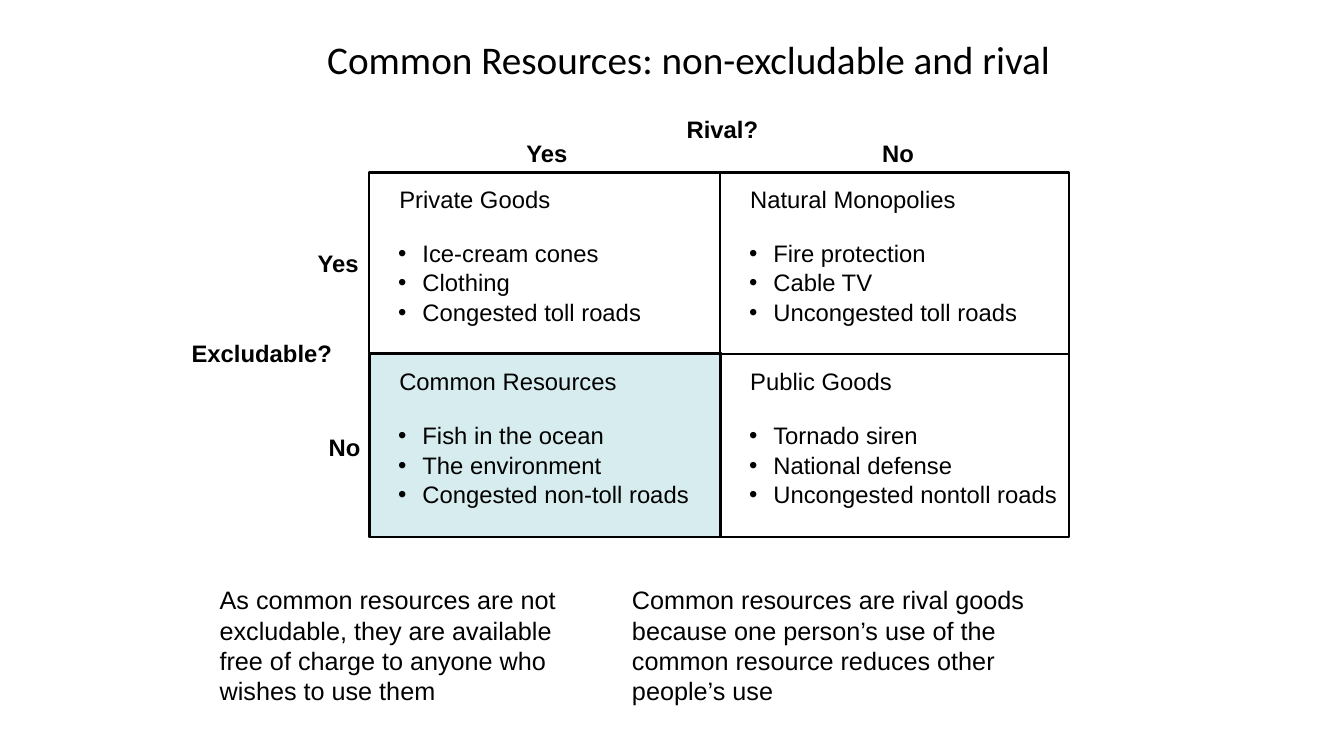
from lxml import etree
from pptx import Presentation
from pptx import util as u
from pptx.dml import color
from pptx.enum import shapes, text
from pptx.oxml import ns

PX = 9144
HUES = {"ink": "000000", "tint": "BBE0E3"}
BOLD = {"size": u.Pt(17), "bold": True}
PLAIN = {"size": u.Pt(17), "bold": False}
NOTE = {"size": u.Pt(18), "bold": False}
HEAD = {"size": u.Pt(28), "bold": False, "name": "Calibri"}
FLUSH = {"margin_left": 0, "margin_right": 0, "margin_top": 0,
         "margin_bottom": 0, "word_wrap": False}
LABELS = [
    ("Rival?", (681, 114, 72, 29)),
    ("Yes", (522, 138, 41, 29)),
    ("No", (875, 138, 32, 29)),
    ("Yes", (315, 247, 41, 29)),
    ("No", (326, 429, 32, 29)),
    ("Excludable?", (190, 336, 141, 29)),
]
GOODS = [
    [("Private Goods", ["Ice-cream cones", "Clothing", "Congested toll roads"]),
     ("Natural Monopolies", ["Fire protection", "Cable TV", "Uncongested toll roads"])],
    [("Common Resources", ["Fish in the ocean", "The environment", "Congested non-toll roads"]),
     ("Public Goods", ["Tornado siren", "National defense", "Uncongested nontoll roads"])],
]
NOTES = [
    ("As common resources are not excludable, they are available free of charge "
     "to anyone who wishes to use them", (208, 575, 392, 131)),
    ("Common resources are rival goods because one person’s use of the common "
     "resource reduces other people’s use", (617, 575, 417, 131)),
]


def emu(box):
    """Turn px lengths into EMU."""
    return [n * PX for n in box]


def tune(item, style):
    """Set each attribute in a style on an item."""
    for key, val in style.items():
        setattr(item, key, val)


def ink(font, style):
    """Format a font in the text colour."""
    tune(font, {"name": "Arial", **style})
    font.color.rgb = color.RGBColor.from_string(HUES["ink"])


def write(slide, box, lines, style, frame):
    """Add a text box with one paragraph per line and return its paragraphs."""
    tf = slide.shapes.add_textbox(*emu(box)).text_frame
    tune(tf, frame)
    tf.text = "\n".join(lines)
    for par in tf.paragraphs:
        ink(par.runs[0].font, style)
    return tf.paragraphs


def stroke(line, width):
    """Give an outline its colour and width."""
    line.color.rgb = color.RGBColor.from_string(HUES["ink"])
    line.width = u.Pt(width)


def block(slide, box, width, hue=None):
    """Draw an outlined rectangle with an optional sheer fill."""
    rect = slide.shapes.add_shape(shapes.MSO_SHAPE.RECTANGLE, *emu(box))
    rect.shadow.inherit = False
    stroke(rect.line, width)
    if not hue:
        rect.fill.background()
        return
    rect.fill.solid()
    rect.fill.fore_color.rgb = color.RGBColor.from_string(HUES[hue])
    tone = rect.fill._xPr.find(".//" + ns.qn("a:srgbClr"))
    etree.SubElement(tone, ns.qn("a:alpha"), val="60000")


def rule(slide, ends):
    """Draw a straight grid line."""
    line = slide.shapes.add_connector(shapes.MSO_CONNECTOR.STRAIGHT, *emu(ends))
    stroke(line.line, 1.63)
    etree.SubElement(line._element.spPr, ns.qn("a:effectLst"))


def cell(slide, box, name, items):
    """Place a heading and its bullet list in a cell."""
    x, y, w, h = box
    write(slide, (x + 30, y + 12, w - 40, 29), [name], PLAIN, FLUSH)
    for par in write(slide, (x + 29, y + 65, w - 35, 88), items, PLAIN, FLUSH):
        par.line_spacing = u.Pt(21)
        props = par._p.get_or_add_pPr()
        props.set("marL", str(24 * PX))
        props.set("indent", str(-24 * PX))
        etree.SubElement(props, ns.qn("a:buFont"), typeface="Arial")
        etree.SubElement(props, ns.qn("a:buChar"), char="•")


def grid(slide, box):
    """Draw the two-by-two matrix of goods."""
    x, y, w, h = box
    dx, dy = 348, 181
    block(slide, (x + 1, y + dy - 2, dx, h - dy + 2), 1, "tint")
    block(slide, box, 1.63)
    rule(slide, (x + dx, y, x + dx, y + h))
    rule(slide, (x, y + dy - 1, x + w, y + dy - 1))
    for r, row in enumerate(GOODS):
        for c, (name, items) in enumerate(row):
            cell(slide, (x + c * dx, y + r * dy, dx, dy), name, items)


def title(slide, box, words):
    """Fill and place the title."""
    head = slide.shapes.title
    tune(head, dict(zip(("left", "top", "width", "height"), emu(box))))
    tf = head.text_frame
    tf.text = words
    tune(tf, {"vertical_anchor": text.MSO_ANCHOR.MIDDLE,
              "auto_size": text.MSO_AUTO_SIZE.NONE, "word_wrap": True})
    par = tf.paragraphs[0]
    tune(par, {"alignment": text.PP_ALIGN.CENTER, "line_spacing": 0.8})
    ink(par.runs[0].font, HEAD)


def main():
    """Build and save the slide."""
    deck = Presentation()
    tune(deck, {"slide_width": 1333 * PX, "slide_height": 750 * PX})
    slide = deck.slides.add_slide(deck.slide_layouts[5])
    title(slide, (233, 25, 900, 75), "Common Resources: non-excludable and rival")
    grid(slide, (366, 171, 694, 362))
    for words, box in LABELS:
        write(slide, box, [words], BOLD, FLUSH)
    for words, box in NOTES:
        write(slide, box, [words], NOTE, {"word_wrap": True})
    deck.save("out.pptx")


if __name__ == "__main__":
    main()
